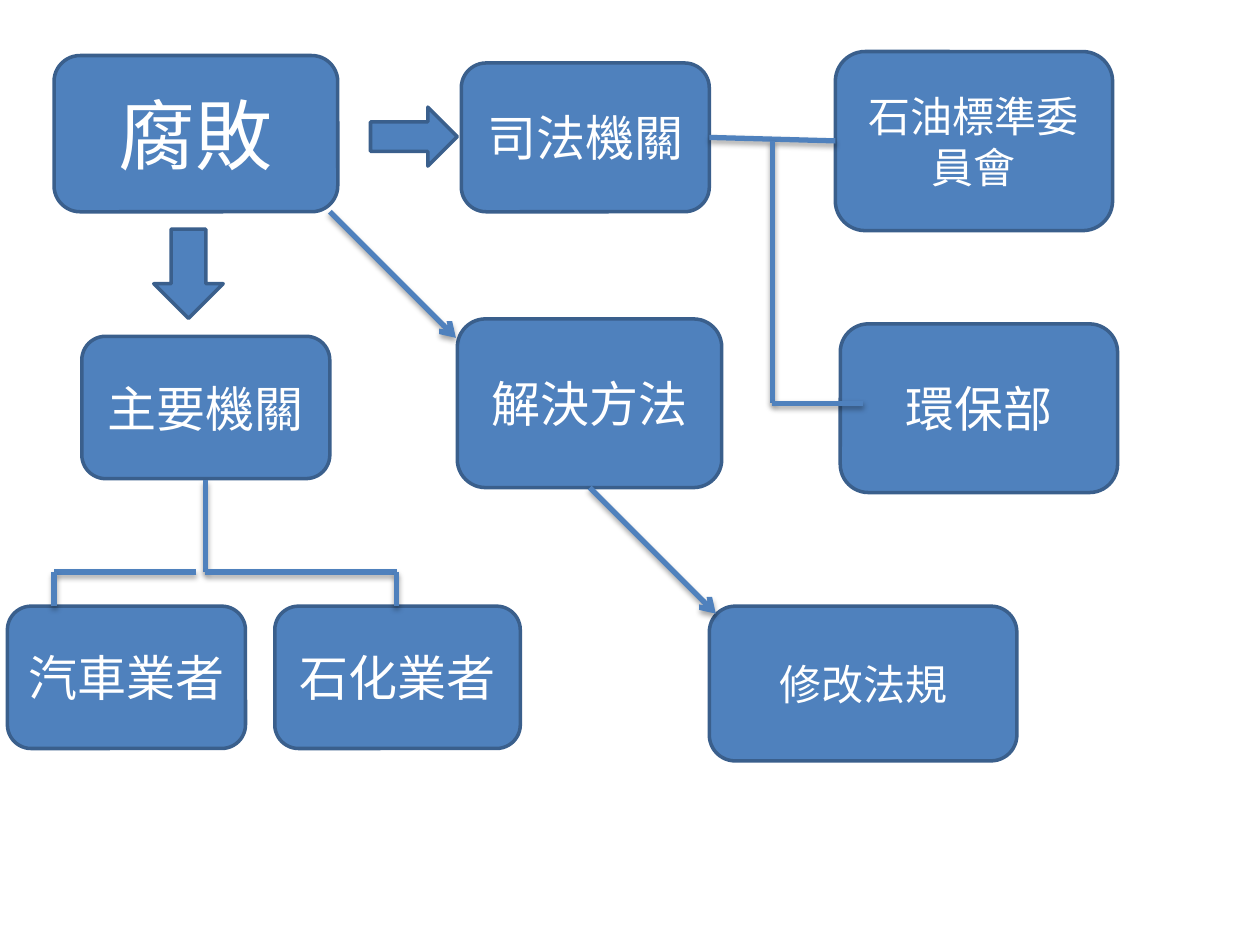
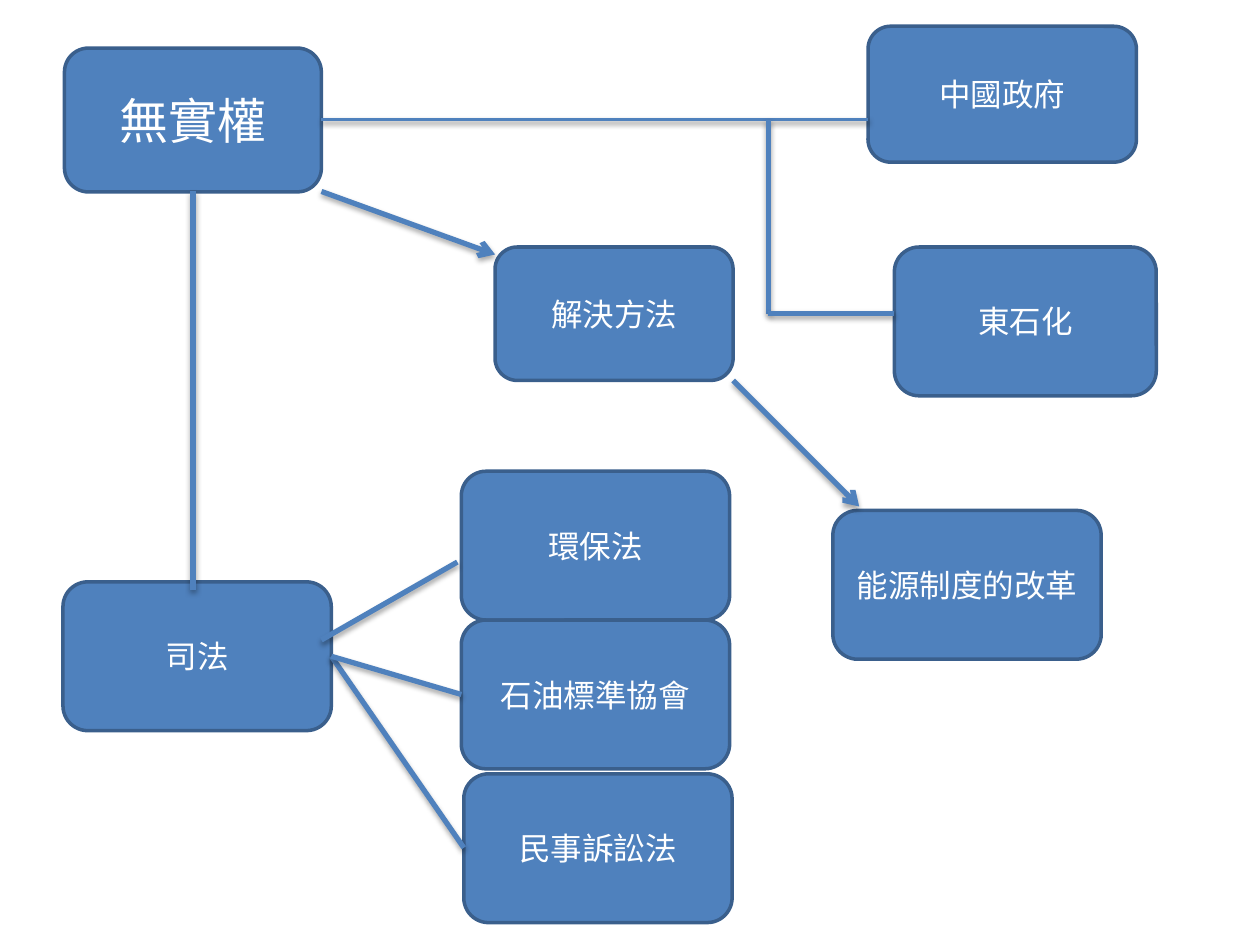
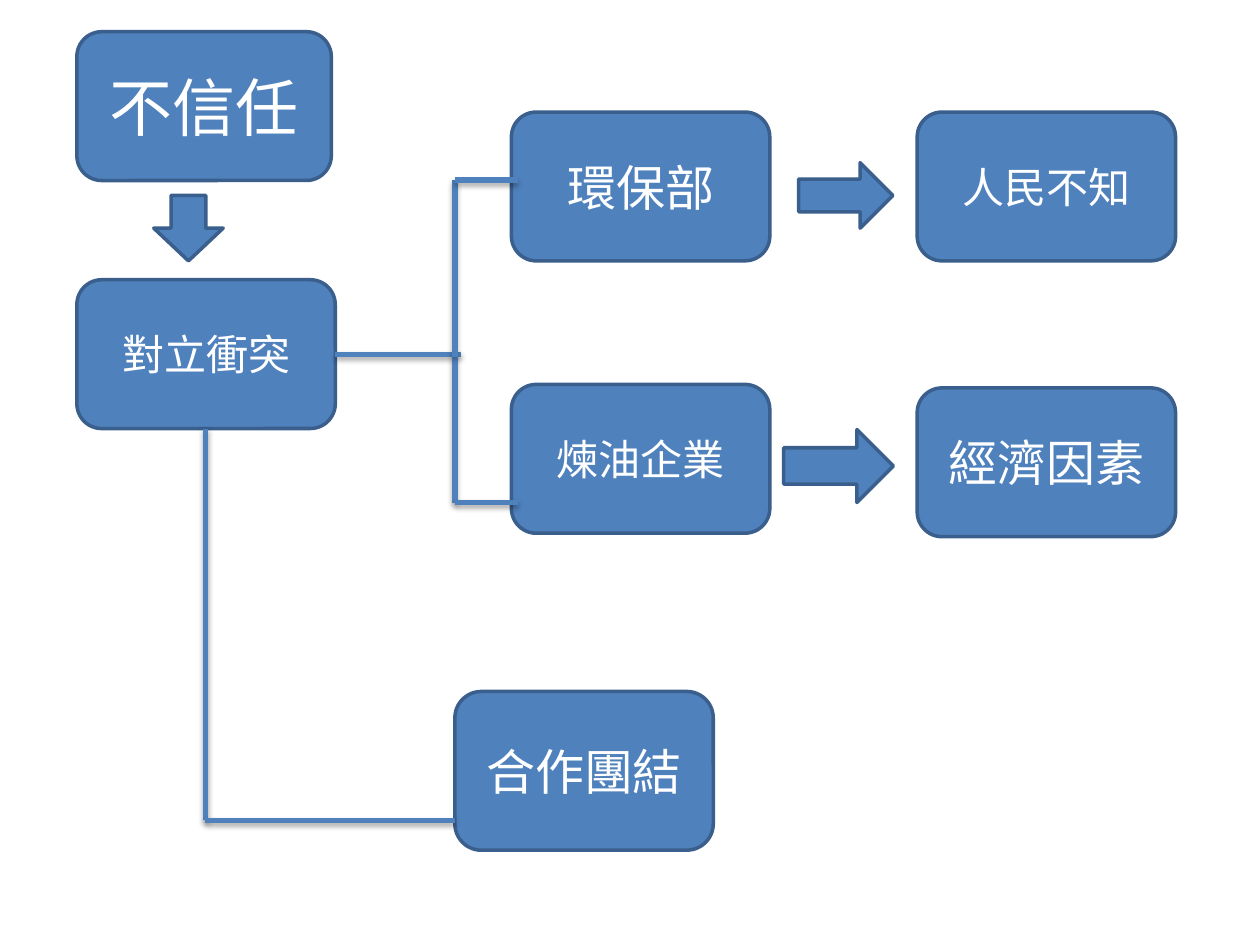
import dataclasses
import itertools

import lxml.etree
import pptx
import pptx.dml.color
import pptx.enum.shapes
import pptx.enum.text
import pptx.oxml
import pptx.oxml.ns
import pptx.util

Cm = pptx.util.Cm
Pt = pptx.util.Pt
Kind = pptx.enum.shapes.MSO_SHAPE
qn = pptx.oxml.ns.qn

# Shared look
BLUE, EDGE, WHITE, BLACK = "4F81BD", "3A5F8C", "FFFFFF", "000000"
SANS, LATIN = "Noto Sans CJK SC", "Calibri"
DOWN, RIGHT = Kind.DOWN_ARROW, Kind.RIGHT_ARROW


# Parts of a diagram, all lengths in centimetres
@dataclasses.dataclass
class Box:
    text: str
    left: float
    top: float
    width: float = 5.21
    height: float = 3
    size: int = 28
    font: str = SANS


@dataclasses.dataclass
class Block:
    kind: Kind
    left: float
    top: float
    width: float
    height: float


@dataclasses.dataclass
class Wire:
    points: list[tuple[float, float]]
    arrow: bool = False
    weight: int = 3


@dataclasses.dataclass
class Chart:
    boxes: list[Box]
    blocks: list[Block]
    wires: list[Wire]


def law(text: str, left: float, top: float, width: float = 5.41,
        height: float = 3) -> Box:
    """Small box with Latin-font text."""
    return Box(text, left, top, width, height, 18, LATIN)


def color(value: str) -> pptx.dml.color.RGBColor:
    return pptx.dml.color.RGBColor.from_string(value)


def add_shape(slide, kind: Kind, part: Box | Block):
    shape = slide.shapes.add_shape(
        kind, Cm(part.left), Cm(part.top), Cm(part.width), Cm(part.height))
    shape.shadow.inherit = False
    shape.fill.solid()
    shape.fill.fore_color.rgb = color(BLUE)
    shape.line.color.rgb = color(EDGE)
    shape.line.width = Pt(2)
    return shape


def add_box(slide, box: Box) -> None:
    frame = add_shape(slide, Kind.ROUNDED_RECTANGLE, box).text_frame
    frame.word_wrap = True
    frame.vertical_anchor = pptx.enum.text.MSO_ANCHOR.MIDDLE
    para = frame.paragraphs[0]
    para.alignment = pptx.enum.text.PP_ALIGN.CENTER
    run = para.add_run()
    run.text = box.text
    run.font.size = Pt(box.size)
    run.font.name = box.font
    run.font.color.rgb = color(WHITE)
    east = lxml.etree.SubElement(run.font._element, qn("a:ea"))
    east.set("typeface", box.font)


def add_shade(line, weight: int) -> None:
    """Soft shadow below a line; thin lines sit closer to it."""
    gap, alpha = (1.8, 35) if weight == 3 else (1.6, 38)
    effect = lxml.etree.SubElement(line._element.spPr, qn("a:effectLst"))
    shade = lxml.etree.SubElement(
        effect, qn("a:outerShdw"), blurRad=str(Pt(3.1)), dist=str(Pt(gap)),
        dir="5400000", rotWithShape="0")
    tint = lxml.etree.SubElement(shade, qn("a:srgbClr"), val=BLACK)
    lxml.etree.SubElement(tint, qn("a:alpha"), val=str(alpha * 1000))


def add_wire(slide, wire: Wire) -> None:
    """Draw one straight line for each leg of the wire."""
    for start, end in itertools.pairwise(wire.points):
        line = slide.shapes.add_connector(
            pptx.enum.shapes.MSO_CONNECTOR.STRAIGHT,
            *(Cm(value) for value in start + end))
        line.line.color.rgb = color(BLUE)
        line.line.width = Pt(wire.weight)
        if wire.arrow:
            lxml.etree.SubElement(
                line.line._get_or_add_ln(), qn("a:tailEnd"), type="arrow")
        add_shade(line, wire.weight)


# Corruption
graft = Chart(
    boxes=[
        Box("腐敗", 1.09, 1.12, 5.72, 3.15, 44),
        Box("主要機關", 1.65, 6.78, 5, 2.87),
        Box("司法機關", 9.3, 1.27, 5),
        Box("解決方法", 9.22, 6.43, 5.33, 3.4),
        Box("汽車業者", 0.15, 12.22, 4.8, 2.87),
        Box("石化業者", 5.54, 12.22, 4.95, 2.87),
        Box("石油標準委員會", 16.84, 1.04, 5.59, 3.61, 24),
        Box("環保部", 16.94, 6.53, 5.59, 3.4),
        Box("修改法規", 14.3, 12.22, 6.2, 3.12, 24),
    ],
    blocks=[
        Block(DOWN, 3.1, 4.62, 1.4, 1.8),
        Block(RIGHT, 7.47, 2.16, 1.75, 1.19),
    ],
    wires=[
        Wire([(6.65, 4.27), (9.19, 6.81)], arrow=True),
        Wire([(11.89, 9.83), (14.43, 12.37)], arrow=True),
        Wire([(14.3, 2.77), (16.84, 2.84)]),
        Wire([(15.57, 2.84), (15.57, 8.13), (17.4, 8.13)]),
        Wire([(4.14, 9.68), (4.14, 11.53), (8, 11.53), (8, 12.22)]),
        Wire([(3.96, 11.53), (1.09, 11.53), (1.09, 12.22)]),
    ],
)

# No real power
power = Chart(
    boxes=[
        Box("無實權", 1.3, 0.97, 5.18, 2.9),
        law("東石化", 18.03, 4.98, 5.28),
        law("司法", 1.27, 11.73),
        law("中國政府", 17.5, 0.53, height=2.74),
        law("環保法", 9.3, 9.5),
        law("石油標準協會", 9.3, 12.5),
        law("民事訴訟法", 9.35, 15.6),
        law("解決方法", 9.98, 4.98, 4.8, 2.69),
        law("能源制度的改革", 16.79, 10.29),
    ],
    blocks=[],
    wires=[
        Wire([(3.89, 3.86), (3.89, 11.89)]),
        Wire([(6.48, 2.41), (17.5, 2.41)], weight=2),
        Wire([(15.49, 2.41), (15.49, 6.32), (18.03, 6.32)]),
        Wire([(6.48, 3.86), (9.98, 5.13)], arrow=True),
        Wire([(14.78, 7.67), (17.32, 10.21)], arrow=True),
        Wire([(6.68, 13.23), (9.35, 17.09)]),
        Wire([(6.48, 12.9), (9.22, 11.33)]),
        Wire([(6.68, 13.23), (9.3, 14)]),
    ],
)

# Distrust
doubt = Chart(
    boxes=[
        Box("不信任", 1.55, 0.64, 5.13, size=36),
        Box("對立衝突", 1.55, 5.64, size=24),
        Box("經濟因素", 18.49, 7.82),
        Box("環保部", 10.31, 2.26),
        Box("煉油企業", 10.31, 7.75, size=24),
        Box("合作團結", 9.17, 13.94, height=3.2),
        Box("人民不知", 18.49, 2.26, size=24),
    ],
    blocks=[
        Block(DOWN, 3.1, 3.94, 1.4, 1.32),
        Block(RIGHT, 15.8, 8.66, 2.21, 1.47),
        Block(RIGHT, 16.1, 3.28, 1.9, 1.32),
    ],
    wires=[
        Wire([(6.76, 7.14), (9.3, 7.14)]),
        Wire([(9.17, 7.19), (9.17, 10.13), (10.44, 10.13)]),
        Wire([(9.17, 7.19), (9.17, 3.63), (10.44, 3.63)]),
        Wire([(4.14, 8.64), (4.14, 16.54), (9.17, 16.54)]),
    ],
)


def main() -> None:
    deck = pptx.Presentation()
    deck.slide_width, deck.slide_height = Cm(25.4), Cm(19.05)
    blank = deck.slide_layouts[6]
    for chart in (graft, power, doubt):
        slide = deck.slides.add_slide(blank)
        for box in chart.boxes:
            add_box(slide, box)
        for block in chart.blocks:
            add_shape(slide, block.kind, block)
        for wire in chart.wires:
            add_wire(slide, wire)
    deck.save("out.pptx")


if __name__ == "__main__":
    main()
